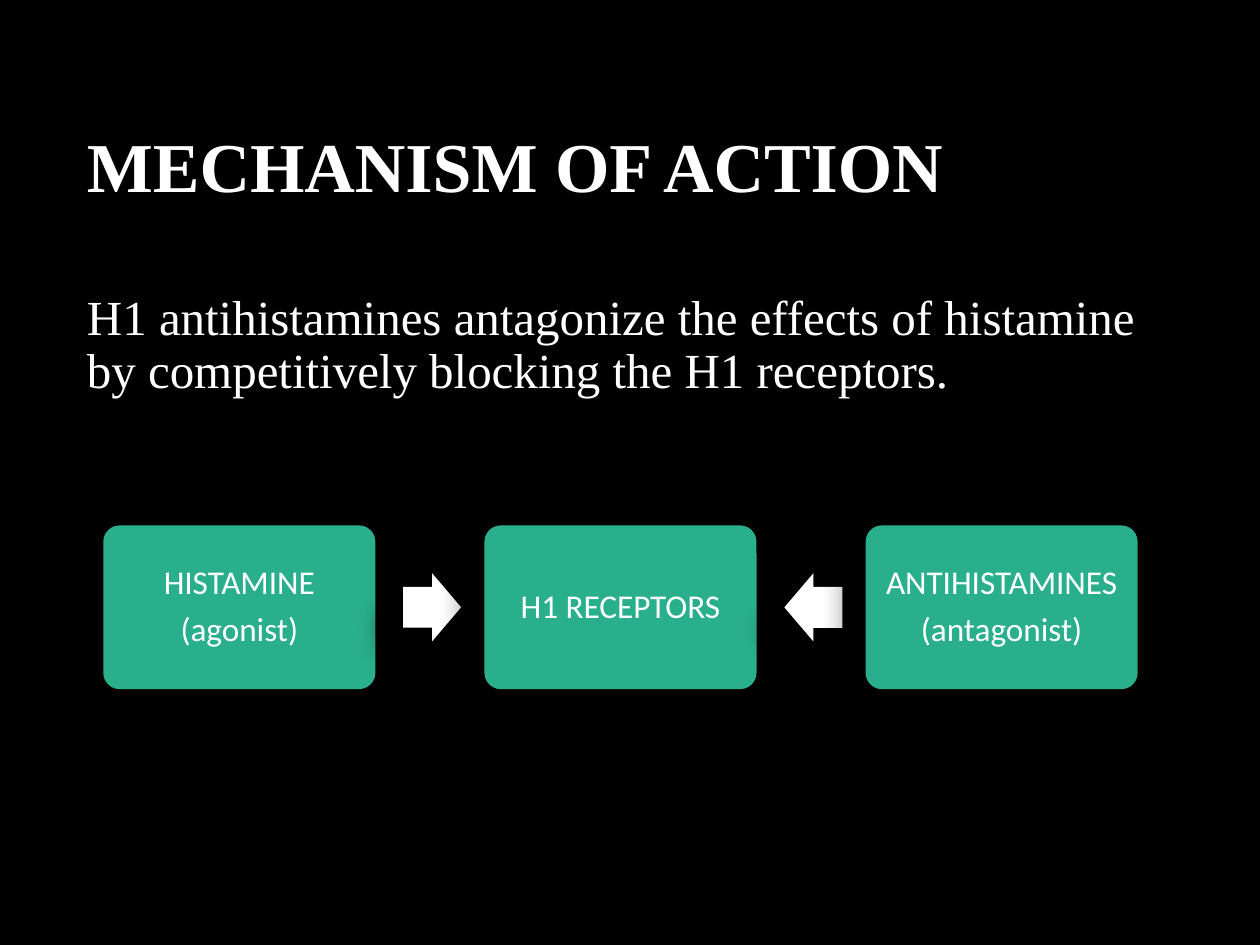
from dataclasses import dataclass

from lxml import etree
from pptx import Presentation
from pptx.dml.color import RGBColor
from pptx.enum.shapes import MSO_SHAPE
from pptx.enum.text import MSO_ANCHOR, PP_ALIGN
from pptx.oxml.ns import qn
from pptx.util import Inches, Pt

CARD = MSO_SHAPE.ROUNDED_RECTANGLE
ARROW = MSO_SHAPE.RIGHT_ARROW
MIDDLE = MSO_ANCHOR.MIDDLE
CENTER = PP_ALIGN.CENTER


@dataclass(frozen=True)
class Theme:
    back: str = "000000"
    ink: str = "FFFFFF"
    card: str = "29AF8C"
    shade: str = "000000"
    serif: str = "Times New Roman"
    sans: str = "Calibri"
    title: int = 40
    body: int = 28
    label: int = 19


class Deck:
    """Draws styled elements on the current slide."""

    def __init__(self, slide, theme):
        self.slide = slide
        self.theme = theme
        fill = slide.background.fill
        fill.solid()
        fill.fore_color.rgb = RGBColor.from_string(theme.back)

    def run(self, para, text, font, size, bold=False):
        para.line_spacing = 0.9
        run = para.add_run()
        run.text = text
        run.font.name = font
        run.font.size = Pt(size)
        run.font.bold = bold
        run.font.color.rgb = RGBColor.from_string(self.theme.ink)

    def heading(self, title, body):
        box = self.slide.shapes.add_textbox(
            Inches(0.69), Inches(0.4), Inches(8.62), Inches(2.53))
        frame = box.text_frame
        frame.word_wrap = True
        frame.margin_left = frame.margin_right = frame.margin_bottom = 0
        frame.margin_top = Inches(0.65)
        self.run(frame.paragraphs[0], title, self.theme.serif, self.theme.title, True)
        para = frame.add_paragraph()
        para.space_before = Pt(49)
        self.run(para, body, self.theme.serif, self.theme.body)

    def shape(self, kind, left, top, width, height, color):
        shape = self.slide.shapes.add_shape(
            kind, Inches(left), Inches(top), Inches(width), Inches(height))
        shape.fill.solid()
        shape.fill.fore_color.rgb = RGBColor.from_string(color)
        shape.line.fill.background()
        self.shadow(shape)
        return shape

    def shadow(self, shape):
        shape.shadow.inherit = False
        effects = shape._element.spPr.find(qn("a:effectLst"))
        outer = etree.SubElement(
            effects, qn("a:outerShdw"), blurRad=str(Pt(11.8)),
            dist=str(Pt(19.7)), dir=str(141 * 60000), rotWithShape="0")
        color = etree.SubElement(outer, qn("a:srgbClr"), val=self.theme.shade)
        etree.SubElement(color, qn("a:alpha"), val="28000")

    def card(self, left, lines):
        card = self.shape(CARD, left, 4.17, 2.16, 1.3, self.theme.card)
        card.adjustments[0] = 0.1
        frame = card.text_frame
        frame.word_wrap = True
        frame.vertical_anchor = MIDDLE
        frame.margin_left = frame.margin_right = Inches(0.12)
        frame.margin_top = frame.margin_bottom = Inches(0.12)
        for i, line in enumerate(lines):
            para = frame.add_paragraph() if i else frame.paragraphs[0]
            para.alignment = CENTER
            para.space_after = Pt(6)
            self.run(para, line, self.theme.sans, self.theme.label)

    def arrow(self, left, turn):
        arrow = self.shape(ARROW, left, 4.55, 0.46, 0.54, self.theme.ink)
        arrow.adjustments[0] = 0.6
        arrow.adjustments[1] = 0.5
        arrow.rotation = turn


def main():
    prs = Presentation()
    prs.slide_width = Inches(10)
    prs.slide_height = Inches(7.5)
    deck = Deck(prs.slides.add_slide(prs.slide_layouts[6]), Theme())
    deck.heading(
        "MECHANISM OF ACTION",
        "H1 antihistamines antagonize the effects of histamine "
        "by competitively blocking the H1 receptors.")

    cards = [
        ("HISTAMINE", "(agonist)"),
        ("H1 RECEPTORS",),
        ("ANTIHISTAMINES", "(antagonist)"),
    ]
    turns = [0, 180]
    first, last = 0.82, 6.87
    step = (last - first) / (len(cards) - 1)
    for i, lines in enumerate(cards):
        left = first + i * step
        deck.card(left, lines)
        if i < len(turns):
            deck.arrow(left + 2.38, turns[i])
    prs.save("out.pptx")


if __name__ == "__main__":
    main()
